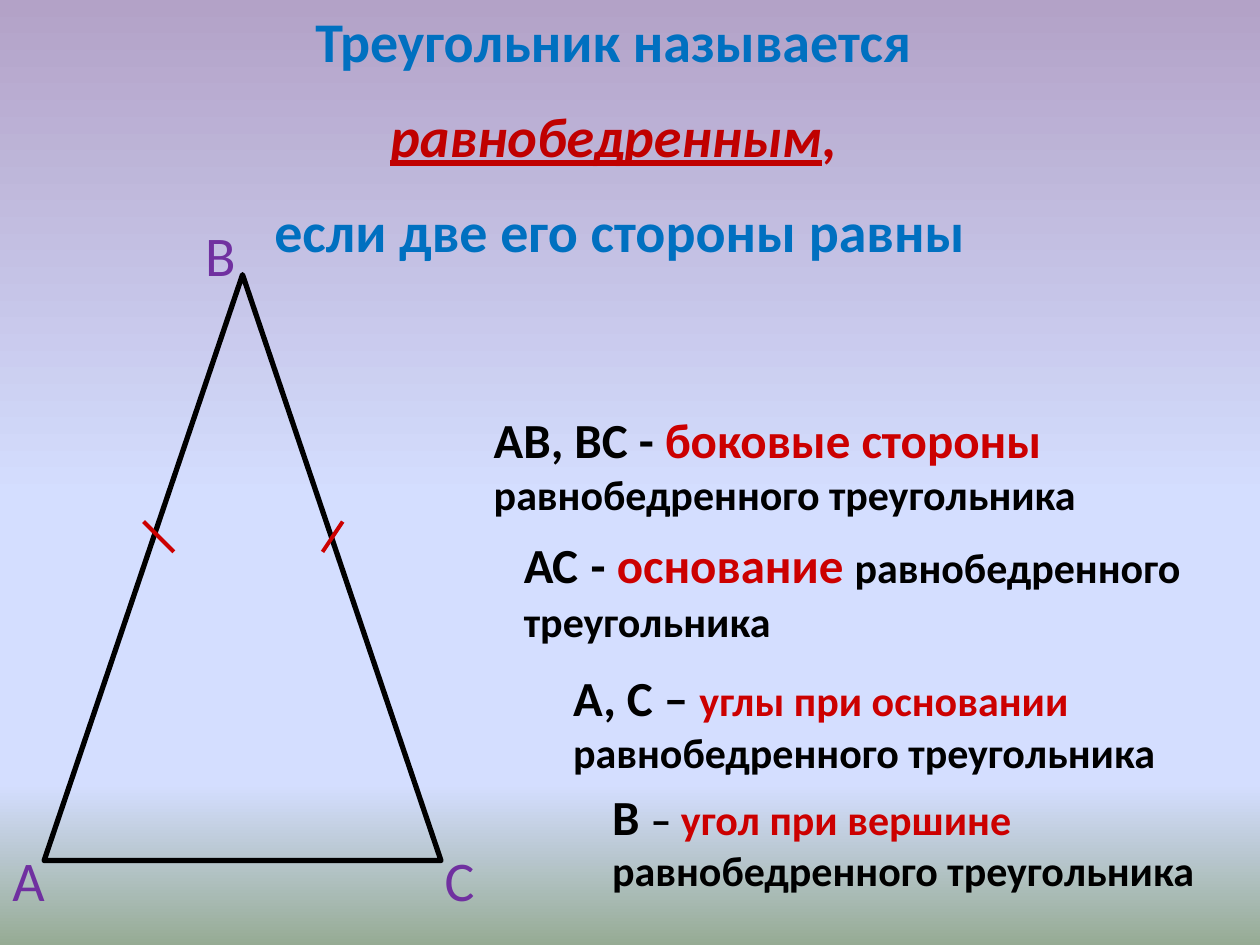
from lxml.etree import SubElement
from pptx import Presentation
from pptx.dml.color import RGBColor
from pptx.enum.shapes import MSO_CONNECTOR as Connector, MSO_SHAPE as Shape
from pptx.enum.text import MSO_AUTO_SIZE as AutoSize, PP_ALIGN as Align
from pptx.oxml.ns import qn
from pptx.util import Inches, Pt

BLACK = RGBColor(0x00, 0x00, 0x00)
RED = RGBColor(0xCC, 0x00, 0x00)
DARK_RED = RGBColor(0xC0, 0x00, 0x00)
BLUE = RGBColor(0x00, 0x70, 0xC0)
PURPLE = RGBColor(0x70, 0x30, 0xA0)
LILAC = RGBColor(0xB3, 0xA2, 0xC7)
SKY = RGBColor(0xD4, 0xDE, 0xFF)
GRASS = RGBColor(0x96, 0xAB, 0x94)


class Board:
    font = "Calibri"
    paragraph_gap = Pt(16)

    def __init__(self, slide):
        self.slide = slide

    def background(self, stops):
        fill = self.slide.background.fill
        fill.gradient()
        fill.gradient_angle = 270
        stop_list = next(self.slide.element.iter(qn("a:gsLst")))
        for stop in list(stop_list):
            stop_list.remove(stop)
        for percent, color in stops:
            stop = SubElement(stop_list, qn("a:gs"), pos=str(percent * 1000))
            SubElement(stop, qn("a:srgbClr"), val=str(color))

    def triangle(self, left, top, width, height):
        triangle = self.slide.shapes.add_shape(
            Shape.ISOSCELES_TRIANGLE,
            Inches(left), Inches(top), Inches(width), Inches(height))
        triangle.shadow.inherit = False
        triangle.fill.background()
        triangle.line.color.rgb = BLACK
        triangle.line.width = Pt(3)

    def tick(self, x1, y1, x2, y2):
        tick = self.slide.shapes.add_connector(
            Connector.STRAIGHT, Inches(x1), Inches(y1), Inches(x2), Inches(y2))
        tick.line.color.rgb = RED
        tick.line.width = Pt(2.25)
        SubElement(tick.element.spPr, qn("a:effectLst"))

    def text(self, left, top, width, height, paragraphs, bold=True, align=Align.LEFT):
        box = self.slide.shapes.add_textbox(
            Inches(left), Inches(top), Inches(width), Inches(height))
        frame = box.text_frame
        frame.word_wrap = True
        frame.auto_size = AutoSize.SHAPE_TO_FIT_TEXT
        for index, parts in enumerate(paragraphs):
            paragraph = frame.add_paragraph() if index else frame.paragraphs[0]
            paragraph.alignment = align
            if index:
                paragraph.space_before = self.paragraph_gap
            for words, size, color, *accents in parts:
                run = paragraph.add_run()
                run.text = words
                run.font.name = self.font
                run.font.size = Pt(size)
                run.font.color.rgb = color
                run.font.bold = bold
                run.font.italic = "italic" in accents
                run.font.underline = "underline" in accents


def main():
    deck = Presentation()
    deck.slide_width, deck.slide_height = Inches(10), Inches(7.5)
    board = Board(deck.slides.add_slide(deck.slide_layouts[6]))
    board.background([(0, LILAC), (53, SKY), (83, SKY), (100, GRASS)])

    board.triangle(0.35, 2.18, 3.15, 4.65)
    board.tick(1.14, 4.14, 1.38, 4.38)
    board.tick(2.72, 4.14, 2.56, 4.38)

    for vertex, left, top, width in [
            ("А", 0, 6.66, 0.87), ("В", 1.53, 1.7, 0.63), ("С", 3.43, 6.66, 1.1)]:
        board.text(left, top, width, 0.63, [[(vertex, 32, PURPLE)]], bold=False)

    owner = ("равнобедренного треугольника", 24, BLACK)
    definitions = [
        (3.82, 3.2, 6.18, 0.97,
         [("АВ, ВС - ", 28, BLACK), ("боковые стороны ", 28, RED)]),
        (4.45, 5.25, 5.28, 0.97,
         [("А, С – ", 28, BLACK), ("углы при основании ", 24, RED)]),
        (4.06, 4.14, 5.94, 1.04,
         [("АС", 28, BLACK), (" ", 32, BLACK), ("- ", 28, BLACK),
          ("основание ", 28, RED)]),
        (4.76, 6.19, 5.24, 0.97,
         [("В ", 28, BLACK), ("– ", 24, BLACK), ("угол при вершине ", 24, RED)]),
    ]
    for left, top, width, height, term in definitions:
        board.text(left, top, width, height, [term + [owner]])

    board.text(0.51, 0, 8.82, 2.26, [
        [("Треугольник называется ", 32, BLUE)],
        [("равнобедренным", 32, DARK_RED, "italic", "underline"),
         (", ", 32, DARK_RED, "italic")],
        [("если две его стороны равны", 32, BLUE)],
    ], align=Align.CENTER)

    deck.save("out.pptx")


if __name__ == "__main__":
    main()
